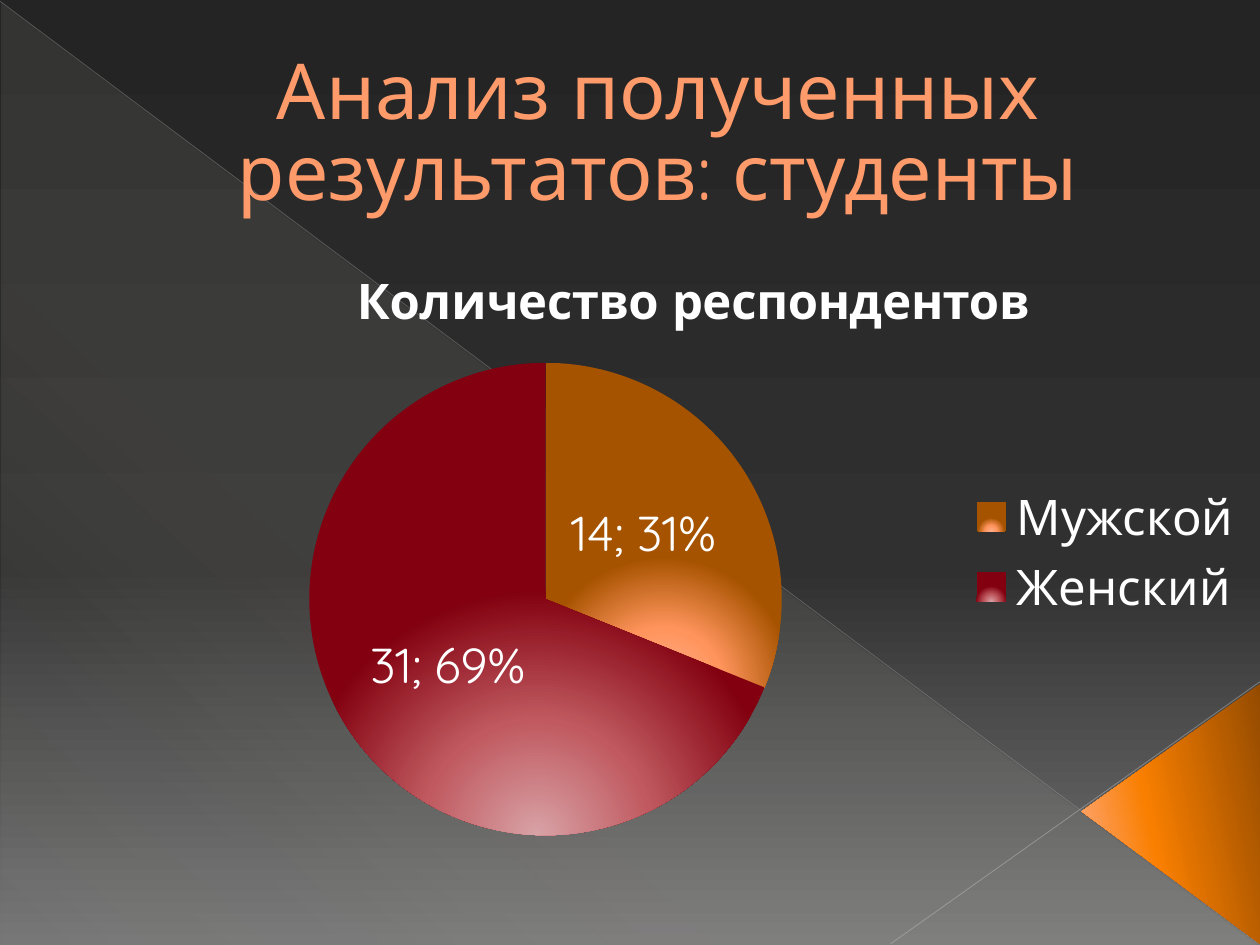
from lxml.etree import SubElement
from pptx import Presentation
from pptx.chart.data import CategoryChartData
from pptx.dml.color import RGBColor
from pptx.enum.chart import XL_CHART_TYPE, XL_LABEL_POSITION, XL_LEGEND_POSITION
from pptx.enum.shapes import MSO_CONNECTOR, MSO_SHAPE
from pptx.enum.text import MSO_ANCHOR, MSO_AUTO_SIZE, PP_ALIGN
from pptx.oxml import parse_xml
from pptx.oxml.ns import nsdecls, qn
from pptx.util import Inches, Pt

FONT = "Quicksand"
HEX = {
    "white": "FFFFFF", "title": "FF9B6A", "edge": "A65806",
    "veil": "E3DED1", "long": "B6B6B6", "short": "BFBFBF",
}
BACK = [(0, "242424"), (60, "303030"), (100, "767676")]
VEIL = [(0, HEX["veil"], 10), (70, HEX["veil"], 8), (100, HEX["veil"], 1)]
ARROW = [(0, "944B00"), (60, "F97F00"), (100, "FFAE8D")]
SLICES = [
    [(0, "FFAF8C"), (30, "FF945C"), (65, "A65300"), (100, "A65300")],
    [(0, "D8A2A6"), (35, "C05A60"), (75, "82000F"), (100, "82000F")],
]


def rgb(name):
    return RGBColor.from_string(HEX[name])


def grade(props, stops, angle=None):
    """Swap a solid fill for a gradient: linear, or radial from the bottom."""
    marks = "".join(
        f'<a:gs pos="{pos * 1000}"><a:srgbClr val="{tone}">'
        + "".join(f'<a:alpha val="{part * 1000}"/>' for part in alpha)
        + "</a:srgbClr></a:gs>"
        for pos, tone, *alpha in stops)
    if angle is None:
        way = '<a:path path="circle"><a:fillToRect l="50000" t="100000" r="50000"/></a:path>'
    else:
        way = f'<a:lin ang="{angle * 60000}" scaled="0"/>'
    fill = parse_xml(f'<a:gradFill {nsdecls("a")} rotWithShape="1">'
                     f"<a:gsLst>{marks}</a:gsLst>{way}</a:gradFill>")
    props.replace(props.find(qn("a:solidFill")), fill)


def style(font, size=28, color="white", bold=False):
    font.name, font.size, font.bold = FONT, Pt(size), bold
    font.color.rgb = rgb(color)


def write(frame, text, align=PP_ALIGN.CENTER, **form):
    para = frame.paragraphs[0]
    para.alignment = align
    run = para.add_run()
    run.text = text
    style(run.font, **form)
    return para, run


class Deck:
    def __init__(self):
        self.file = Presentation()
        self.file.slide_width, self.file.slide_height = Inches(10), Inches(7.5)
        self.slide = self.file.slides.add_slide(self.file.slide_layouts[5])
        self.shapes = self.slide.shapes

    def back(self, stops, angle):
        self.slide.background.fill.solid()
        grade(self.slide.element.find(".//" + qn("p:bgPr")), stops, angle)

    def shape(self, kind, box, stops, angle, turn=0):
        shape = self.shapes.add_shape(kind, *map(Inches, box))
        shape.shadow.inherit = False
        shape.rotation = turn
        shape.line.fill.background()
        shape.fill.solid()
        grade(shape.element.spPr, stops, angle)
        return shape

    def line(self, ends, color, width, alpha):
        line = self.shapes.add_connector(MSO_CONNECTOR.STRAIGHT, *map(Inches, ends))
        line.line.color.rgb = rgb(color)
        line.line.width = Pt(width)
        props = line.element.spPr
        tone = props.find(".//" + qn("a:srgbClr"))
        SubElement(tone, qn("a:alpha")).set("val", str(alpha * 1000))
        SubElement(props, qn("a:effectLst"))

    def title(self, text, box):
        title = self.shapes.title
        title.left, title.top, title.width, title.height = map(Inches, box)
        title.element.getparent().append(title.element)
        frame = title.text_frame
        frame.word_wrap = True
        frame.auto_size = MSO_AUTO_SIZE.NONE
        frame.vertical_anchor = MSO_ANCHOR.BOTTOM
        para, run = write(frame, text, size=44, color="title")
        para.line_spacing = 0.88
        props = para._p.get_or_add_pPr()
        props.set("marL", str(Inches(0.53)))
        props.set("indent", "0")
        run._r.get_or_add_rPr().insert(0, parse_xml(
            f'<a:ln {nsdecls("a")} w="{Pt(0.5)}"><a:solidFill>'
            f'<a:srgbClr val="{HEX["edge"]}"/></a:solidFill></a:ln>'))

    def pie(self, name, data, box, plot):
        """Add a pie; plot is its area as shares of the chart."""
        table = CategoryChartData()
        table.categories = list(data)
        table.add_series(name, list(data.values()))
        chart = self.shapes.add_chart(
            XL_CHART_TYPE.PIE, *map(Inches, box), table).chart
        style(chart.font, size=10)
        chart.has_title = True
        write(chart.chart_title.text_frame, name, bold=True)
        chart.chart_title.include_in_layout = False
        chart.has_legend = True
        chart.legend.position = XL_LEGEND_POSITION.RIGHT
        chart.legend.include_in_layout = False
        style(chart.legend.font)

        pie = chart.plots[0]
        pie.vary_by_categories = True
        row = pie.series[0]
        for spot, stops in enumerate(SLICES):
            point = row.points[spot].format
            point.fill.solid()
            point.line.fill.background()
            grade(row._element.findall(".//" + qn("c:dPt"))[spot].find(qn("c:spPr")), stops)

        labels = row.data_labels
        style(labels.font)
        labels.position = XL_LABEL_POSITION.CENTER
        labels.show_value = labels.show_percentage = True
        mark = parse_xml(f'<c:separator {nsdecls("c")}>; </c:separator>')
        labels._element.find(qn("c:showBubbleSize")).addnext(mark)

        area = chart._chartSpace.find(".//" + qn("c:plotArea"))
        for old in area.findall(qn("c:layout")):
            area.remove(old)
        sizes = "".join(f'<c:{key} val="{part}"/>' for key, part in zip("xywh", plot))
        area.insert(0, parse_xml(
            f'<c:layout {nsdecls("c")}><c:manualLayout><c:layoutTarget val="inner"/>'
            f'<c:xMode val="edge"/><c:yMode val="edge"/>{sizes}'
            "</c:manualLayout></c:layout>"))


def main():
    deck = Deck()
    deck.back(BACK, 90)
    deck.shape(MSO_SHAPE.RIGHT_TRIANGLE, (0.01, 0.02, 9.98, 7.48), VEIL, 133)
    deck.line((0, 0.01, 9.99, 7.49), "long", 0.39, 35)
    deck.line((10, 5.41, 7.07, 7.49), "short", 0.47, 45)
    arrow = deck.shape(MSO_SHAPE.ISOSCELES_TRIANGLE, (8.26, 5.75, 2.07, 1.42),
                       ARROW, 258, turn=270)
    arrow.adjustments[0] = 0.51
    deck.title("Анализ полученных результатов: студенты", (0.55, 0.16, 8.82, 1.61))
    deck.pie("Количество респондентов", {"Мужской": 14, "Женский": 31},
             (1, 1.88, 9, 5), (0.16, 0.2, 0.42, 0.75))
    deck.file.save("out.pptx")


if __name__ == "__main__":
    main()
